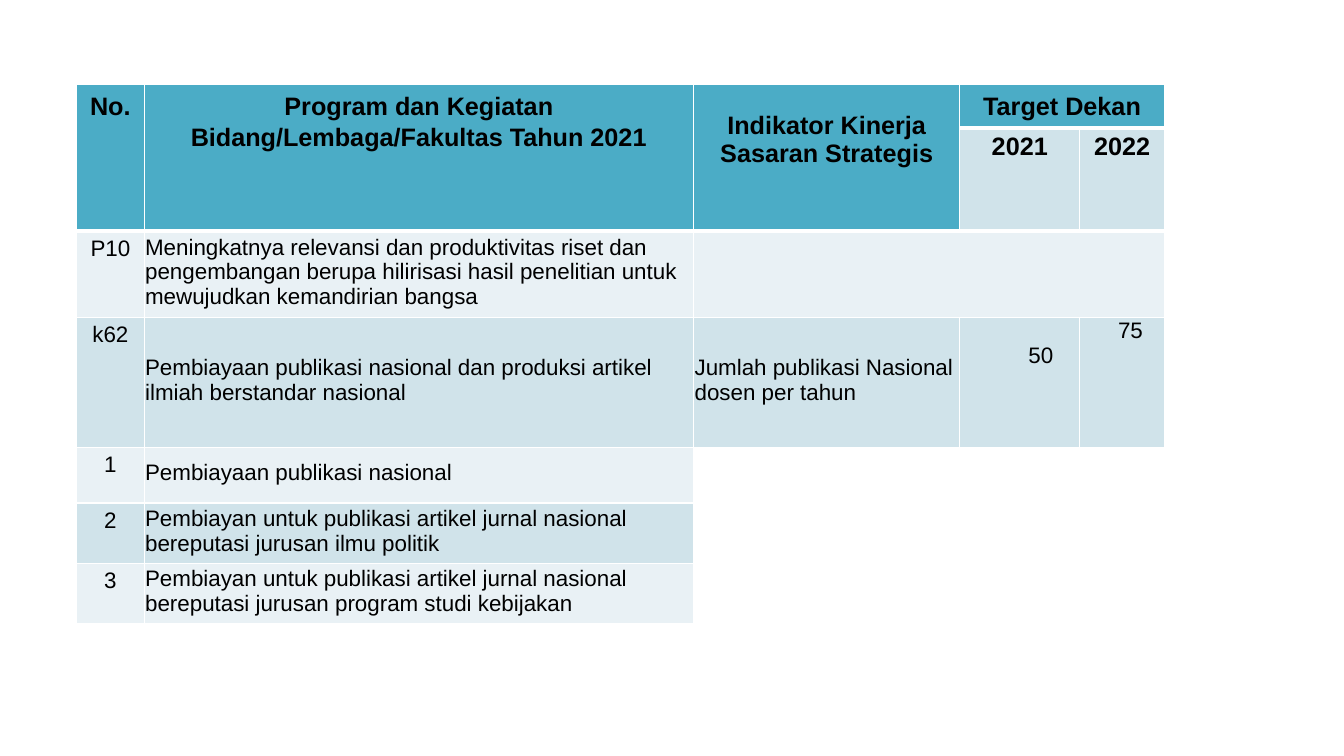
from dataclasses import dataclass

from lxml.etree import SubElement
from pptx import Presentation
from pptx.dml.color import RGBColor
from pptx.enum.text import MSO_ANCHOR as Anchor, PP_ALIGN as Align
from pptx.oxml.ns import qn
from pptx.util import Inches, Pt


@dataclass(frozen=True)
class Theme:
    font: str = "Arial"
    ink: str = "000000"
    header: str = "4BACC6"
    band_dark: str = "D0E3EA"
    band_light: str = "E9F1F5"
    white: str = "FFFFFF"
    header_size: int = 18
    body_size: int = 16
    thin_border: int = 1
    thick_border: int = 3


THEME = Theme()
HEADER_INSETS = (0.1, 0.05, 0.1, 0.05)  # left, top, right, bottom
BODY_INSETS = (0.01, 0.01, 0.01, 0.05)

COLUMN_WIDTHS = (0.67, 5.45, 2.64, 1.19, 0.84)
ROW_HEIGHTS = (0.43, 1.02, 0.86, 1.29, 0.55, 0.6, 0.6, 0.43, 0.43, 0.43)
HEADER_ROWS = 2
MERGES = (  # first row, first column, last row, last column
    (0, 0, 1, 0), (0, 1, 1, 1), (0, 2, 1, 2), (0, 3, 0, 4),
    (2, 2, 2, 4), (4, 2, 9, 4),
)

PROGRAMS = (
    ("P10", "Meningkatnya relevansi dan produktivitas riset dan pengembangan "
            "berupa hilirisasi hasil penelitian untuk mewujudkan kemandirian bangsa"),
    ("k62", "Pembiayaan publikasi nasional dan produksi artikel ilmiah "
            "berstandar nasional"),
    ("1", "Pembiayaan publikasi nasional"),
    ("2", "Pembiayan untuk publikasi artikel jurnal nasional bereputasi "
          "jurusan ilmu politik"),
    ("3", "Pembiayan untuk publikasi artikel jurnal nasional bereputasi "
          "jurusan program studi kebijakan"),
)


def cell_color(row, column):
    """Header colour, then alternating bands down to the last program."""
    if row == 0 or (row == 1 and column < 3):
        return THEME.header
    last_program = HEADER_ROWS + len(PROGRAMS) - 1
    if row > last_program or (row >= 4 and column >= 2):
        return THEME.white
    return THEME.band_dark if row % 2 else THEME.band_light


def add_borders(cell, bottom_width):
    properties = cell._tc.get_or_add_tcPr()
    thin = THEME.thin_border
    widths = {"a:lnL": thin, "a:lnR": thin, "a:lnT": thin, "a:lnB": bottom_width}
    for tag, width in widths.items():
        line = SubElement(properties, qn(tag), w=str(Pt(width)))
        fill = SubElement(line, qn("a:solidFill"))
        SubElement(fill, qn("a:srgbClr"), val=THEME.white)


def style_cell(cell, row, column):
    is_header = row == 0 or (row == 1 and column < 3)
    add_borders(cell, THEME.thick_border if is_header else THEME.thin_border)
    cell.fill.solid()
    cell.fill.fore_color.rgb = RGBColor.from_string(cell_color(row, column))


def write_cell(cell, text, header=False, centered=False, middle=False,
               spacing=None, insets=HEADER_INSETS):
    cell.text_frame.text = text
    cell.vertical_anchor = Anchor.MIDDLE if middle else Anchor.TOP
    (cell.margin_left, cell.margin_top,
     cell.margin_right, cell.margin_bottom) = map(Inches, insets)
    para = cell.text_frame.paragraphs[0]
    para.alignment = Align.CENTER if centered else Align.LEFT
    if spacing:
        para.line_spacing = spacing
    font = para.runs[0].font
    font.name = THEME.font
    font.size = Pt(THEME.header_size if header else THEME.body_size)
    font.bold = header
    font.color.rgb = RGBColor.from_string(THEME.ink)


def add_grid(page):
    frame = page.shapes.add_table(
        len(ROW_HEIGHTS), len(COLUMN_WIDTHS), Inches(0.76), Inches(0.84),
        Inches(sum(COLUMN_WIDTHS)), Inches(sum(ROW_HEIGHTS)))
    table = frame.table
    for column, width in zip(table.columns, COLUMN_WIDTHS):
        column.width = Inches(width)
    for row, height in zip(table.rows, ROW_HEIGHTS):
        row.height = Inches(height)
    for row in range(len(ROW_HEIGHTS)):
        for column in range(len(COLUMN_WIDTHS)):
            style_cell(table.cell(row, column), row, column)
    for top, left, bottom, right in MERGES:
        table.cell(top, left).merge(table.cell(bottom, right))
    return table


def write_header(table):
    def heading(row, column, text, **options):
        write_cell(table.cell(row, column), text, header=True, centered=True, **options)

    heading(0, 0, "No.", spacing=1.1)
    heading(0, 1, "Program dan Kegiatan Bidang/Lembaga/Fakultas Tahun 2021", spacing=1.1)
    heading(0, 2, "Indikator Kinerja Sasaran Strategis", middle=True,
            insets=(0.1, 0.05, 0.1, 0.41))
    heading(0, 3, "Target Dekan", middle=True)
    heading(1, 3, "2021")
    heading(1, 4, "2022")


def write_programs(table):
    for row, (code, program) in enumerate(PROGRAMS, HEADER_ROWS):
        write_cell(table.cell(row, 0), code, centered=True)
        write_cell(table.cell(row, 1), program, middle=True, insets=BODY_INSETS)


def write_targets(table):
    # Insets place each target beside its indicator
    targets = (
        (2, "Jumlah publikasi Nasional dosen per tahun", BODY_INSETS),
        (3, "50", (0.68, 0.01, 0.01, 0.55)),
        (4, "75", (0.38, 0.01, 0.01, 1.03)),
    )
    for column, text, insets in targets:
        write_cell(table.cell(3, column), text, middle=True, insets=insets)


def main():
    deck = Presentation()
    deck.slide_width, deck.slide_height = Inches(13.33), Inches(7.5)
    page = deck.slides.add_slide(deck.slide_layouts[6])
    table = add_grid(page)
    write_header(table)
    write_programs(table)
    write_targets(table)
    deck.save("out.pptx")


if __name__ == "__main__":
    main()
